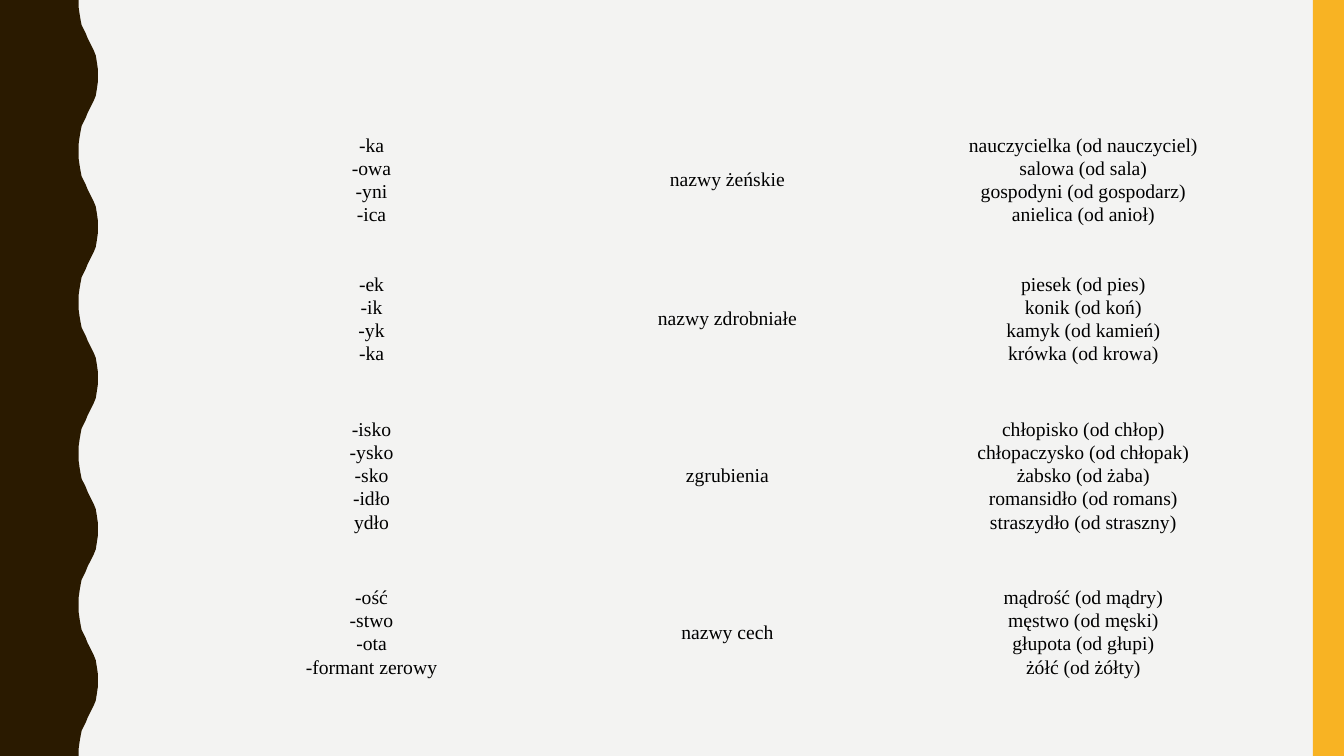
from pptx import Presentation
from pptx.dml.color import RGBColor
from pptx.enum.shapes import MSO_SHAPE
from pptx.enum.text import MSO_ANCHOR, PP_ALIGN
from pptx.util import Inches, Pt

COLORS = {"background": "F3F3F2", "wave": "2A1A00", "stripe": "F8B323", "text": "000000"}
FONT = "Times New Roman"
NO_STYLE = "{2D5ABB26-0587-4C30-8999-92F81FD0307C}"
WIDTH, HEIGHT = 13.33, 7.5

SUFFIX_ROWS = [
    (1.38, ["-ka", "-owa", "-yni", "-ica"], "nazwy żeńskie",
     ["nauczycielka (od nauczyciel)", "salowa (od sala)",
      "gospodyni (od gospodarz)", "anielica (od anioł)"]),
    (1.38, ["-ek", "-ik", "-yk", "-ka"], "nazwy zdrobniałe",
     ["piesek (od pies)", "konik (od koń)", "kamyk (od kamień)", "krówka (od krowa)"]),
    (1.73, ["-isko", "-ysko", "-sko", "-idło", "ydło"], "zgrubienia",
     ["chłopisko (od chłop)", "chłopaczysko (od chłopak)", "żabsko (od żaba)",
      "romansidło (od romans)", "straszydło (od straszny)"]),
    (1.38, ["-ość", "-stwo", "-ota", "-formant zerowy"], "nazwy cech",
     ["mądrość (od mądry)", "męstwo (od męski)", "głupota (od głupi)", "żółć (od żółty)"]),
]
TABLE_LEFT, TABLE_TOP, COLUMN_WIDTH = 1.92, 1.09, 3.53

WAVE_PERIOD, WAVE_COUNT = 1.5, 5
HALF_WAVE = [
    (0.78, 0), (0.78, 0.07), (0.79, 0.14), (0.8, 0.2), (0.81, 0.25),
    (0.83, 0.29), (0.85, 0.33), (0.87, 0.38), (0.89, 0.42), (0.91, 0.46),
    (0.93, 0.5), (0.95, 0.55), (0.96, 0.61), (0.97, 0.68), (0.97, 0.75),
]


def paint(shape, color):
    shape.shadow.inherit = False
    shape.fill.solid()
    shape.fill.fore_color.rgb = RGBColor.from_string(COLORS[color])
    shape.line.fill.background()


def add_wave(page):
    falling = [(x, WAVE_PERIOD - y) for x, y in reversed(HALF_WAVE[:-1])]
    edge = [(x, y + number * WAVE_PERIOD)
            for number in range(WAVE_COUNT) for x, y in HALF_WAVE + falling]
    outline = [(Inches(x), Inches(y)) for x, y in edge + [(0, HEIGHT)]]
    builder = page.shapes.build_freeform(0, 0)
    builder.add_line_segments(outline, close=True)
    paint(builder.convert_to_shape(), "wave")


def fill_cell(cell, lines, space_after):
    cell.fill.background()
    cell.vertical_anchor = MSO_ANCHOR.MIDDLE
    cell.margin_left = cell.margin_right = Inches(0.01)
    cell.margin_top = cell.margin_bottom = Inches(0.01)
    para = cell.text_frame.paragraphs[0]
    para.text = "\v".join(lines)
    para.alignment = PP_ALIGN.CENTER
    para.line_spacing = 1.07
    para.space_after = Pt(space_after)
    para.font.name = FONT
    para.font.size = Pt(14)
    para.font.color.rgb = RGBColor.from_string(COLORS["text"])


def add_suffix_table(page):
    total_height = sum(row[0] for row in SUFFIX_ROWS)
    frame = page.shapes.add_table(
        len(SUFFIX_ROWS), 3, Inches(TABLE_LEFT), Inches(TABLE_TOP),
        Inches(3 * COLUMN_WIDTH), Inches(total_height))
    table = frame.table
    table.first_row = table.horz_banding = False
    table._tbl.tblPr.find("{*}tableStyleId").text = NO_STYLE
    for column in table.columns:
        column.width = Inches(COLUMN_WIDTH)
    for index, (height, suffixes, meaning, examples) in enumerate(SUFFIX_ROWS):
        table.rows[index].height = Inches(height)
        fill_cell(table.cell(index, 0), suffixes, 8)
        fill_cell(table.cell(index, 1), [meaning], 0)
        fill_cell(table.cell(index, 2), examples, 8)


def main():
    deck = Presentation()
    deck.slide_width, deck.slide_height = Inches(WIDTH), Inches(HEIGHT)
    page = deck.slides.add_slide(deck.slide_layouts[6])
    page.background.fill.solid()
    page.background.fill.fore_color.rgb = RGBColor.from_string(COLORS["background"])
    add_wave(page)
    stripe = page.shapes.add_shape(
        MSO_SHAPE.RECTANGLE, Inches(13.02), 0, Inches(0.31), Inches(HEIGHT))
    paint(stripe, "stripe")
    add_suffix_table(page)
    deck.save("out.pptx")


if __name__ == "__main__":
    main()
